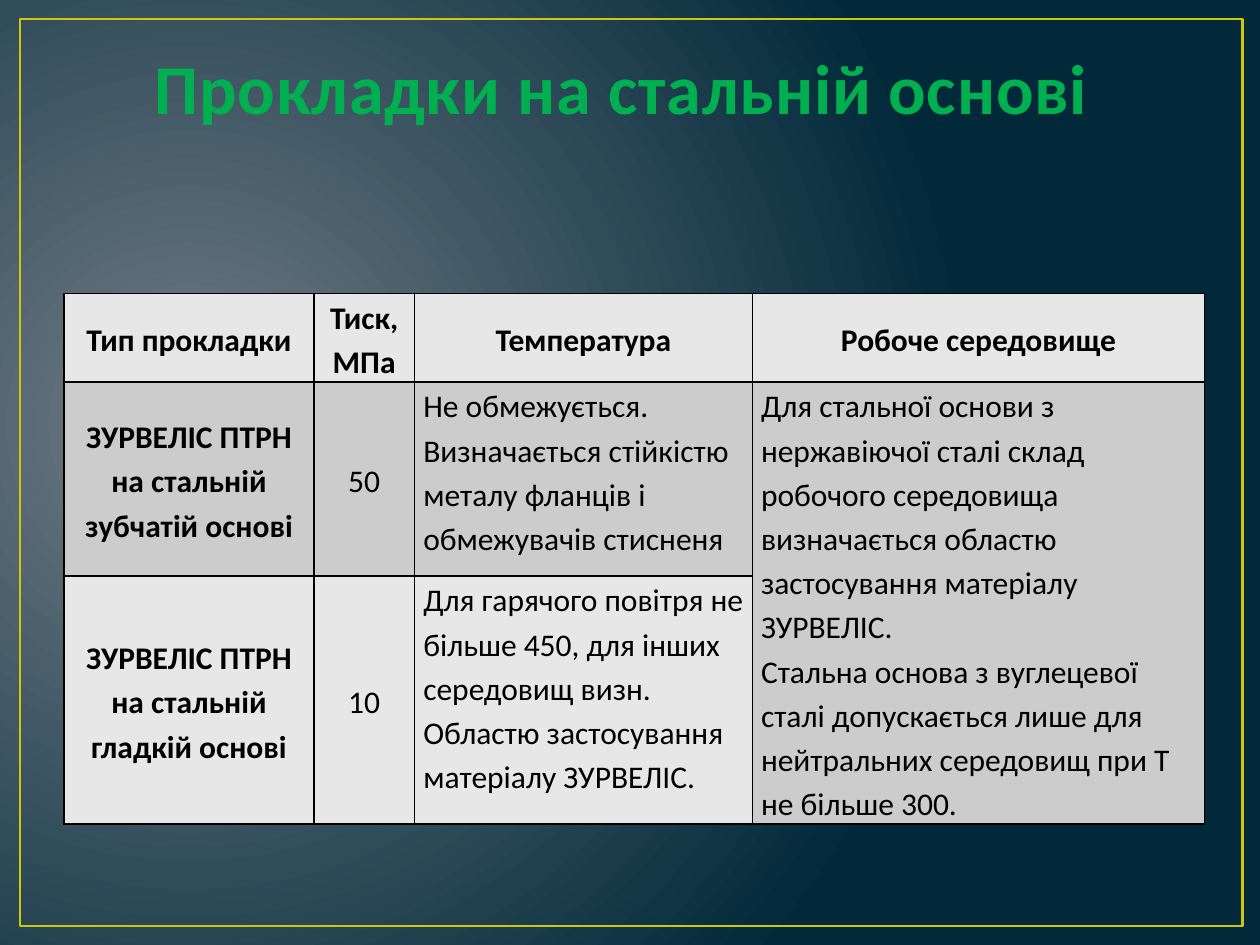
"""Build the slide about gaskets on a steel base."""
from lxml.etree import SubElement
from pptx import Presentation
from pptx.dml.color import RGBColor
from pptx.enum.shapes import MSO_SHAPE
from pptx.enum.text import MSO_ANCHOR as ANCHOR, PP_ALIGN as ALIGN
from pptx.oxml import parse_xml
from pptx.oxml.ns import nsdecls, qn
from pptx.util import Pt

TITLE = "Прокладки на стальній основі "
ROWS = [
    ["Тип прокладки", "Тиск, МПа", "Температура", "Робоче середовище"],
    ["ЗУРВЕЛІС ПТРН на стальній зубчатій основі", "50",
     "Не обмежується. Визначається стійкістю металу фланців і обмежувачів стисненя",
     "Для стальної основи з нержавіючої сталі склад робочого середовища "
     "визначається областю застосування матеріалу ЗУРВЕЛІС.\n"
     "Стальна основа з вуглецевої сталі допускається лише для нейтральних "
     "середовищ при Т не більше 300."],
    ["ЗУРВЕЛІС ПТРН на стальній гладкій основі", "10",
     "Для гарячого повітря не більше 450, для інших середовищ визн. "
     "Областю застосування матеріалу ЗУРВЕЛІС.", ""],
]
COL_WIDTHS = [142.6, 57.6, 193, 258.5]
ROW_HEIGHTS = [39.6, 110.9, 120.2]

FONT = "Calibri"
GLOW = RGBColor(0x71, 0x7C, 0x84)
NIGHT = RGBColor(0x01, 0x29, 0x3A)
YELLOW = RGBColor(0xCF, 0xC6, 0x0D)
GREEN = RGBColor(0x00, 0xB0, 0x50)
OUTLINE = RGBColor(0x38, 0x4F, 0x55)
BLACK = RGBColor(0, 0, 0)
LIGHT = RGBColor(0xE7, 0xE7, 0xE7)
GREY = RGBColor(0xCC, 0xCC, 0xCC)


def line_xml(tag, color, width):
    return parse_xml(
        f'<a:{tag} {nsdecls("a")} w="{int(Pt(width))}"><a:solidFill>'
        f'<a:srgbClr val="{color}"/></a:solidFill></a:{tag}>')


def add_run(p, text, size, color, bold):
    r = p.add_run()
    r.text = text
    r.font.name, r.font.size, r.font.bold = FONT, Pt(size), bold
    r.font.color.rgb = color
    return r


def paint_background(slide):
    fill = slide.background.fill
    fill.gradient()
    for stop, color in zip(fill.gradient_stops, (GLOW, NIGHT)):
        stop.color.rgb = color
    grad = slide._element.find(".//" + qn("a:gradFill"))
    grad.remove(grad.find(qn("a:lin")))
    circle = SubElement(grad, qn("a:path"), path="circle")
    SubElement(circle, qn("a:fillToRect"), l="15000", t="50000", r="85000", b="60000")


def add_frame(slide):
    sp = slide.shapes.add_shape(MSO_SHAPE.RECTANGLE, Pt(11.5), Pt(10.8), Pt(698.4), Pt(518.4))
    sp.shadow.inherit = False
    sp.fill.background()
    sp.line.color.rgb = YELLOW
    sp.line.width = Pt(1.5)
    slide.shapes._spTree.insert(2, sp._element)


def set_title(slide):
    sp = slide.shapes.title
    sp.left, sp.top, sp.width, sp.height = Pt(36), Pt(21.6), Pt(648), Pt(55.4)
    tf = sp.text_frame
    tf.word_wrap = True
    tf.vertical_anchor = ANCHOR.BOTTOM
    p = tf.paragraphs[0]
    p.alignment = ALIGN.CENTER
    props = add_run(p, TITLE, 40, GREEN, True)._r.get_or_add_rPr()
    props.set("spc", "50")
    props.insert(0, line_xml("ln", OUTLINE, 1.05))


def fill_cell(cell, text, row, col):
    cell.margin_left = cell.margin_right = Pt(5)
    cell.margin_top = cell.margin_bottom = 0
    centred = row == 0 or col < 2
    cell.vertical_anchor = ANCHOR.MIDDLE if centred else ANCHOR.TOP
    cell.fill.solid()
    cell.fill.fore_color.rgb = GREY if row == 1 else LIGHT
    for i, side in enumerate(("lnL", "lnR", "lnT", "lnB")):
        cell._tc.get_or_add_tcPr().insert(i, line_xml(side, BLACK, 1))
    tf = cell.text_frame
    for i, line in enumerate(text.split("\n") if text else []):
        p = tf.add_paragraph() if i else tf.paragraphs[0]
        p.alignment = ALIGN.CENTER if centred else ALIGN.LEFT
        p.line_spacing = 1.15
        add_run(p, line, 18, BLACK, row == 0 or col == 0)


def add_gasket_table(slide):
    table = slide.shapes.add_table(
        len(ROWS), len(COL_WIDTHS), Pt(36.7), Pt(167.8),
        Pt(sum(COL_WIDTHS)), Pt(sum(ROW_HEIGHTS))).table
    for column, width in zip(table.columns, COL_WIDTHS):
        column.width = Pt(width)
    for row, height in zip(table.rows, ROW_HEIGHTS):
        row.height = Pt(height)
    table.cell(1, 3).merge(table.cell(2, 3))
    for r, texts in enumerate(ROWS):
        for c, text in enumerate(texts):
            fill_cell(table.cell(r, c), text, r, c)


def main():
    prs = Presentation()
    prs.slide_width, prs.slide_height = Pt(720), Pt(540)
    slide = prs.slides.add_slide(prs.slide_layouts[5])
    paint_background(slide)
    add_frame(slide)
    set_title(slide)
    add_gasket_table(slide)
    prs.save("out.pptx")


if __name__ == "__main__":
    main()
